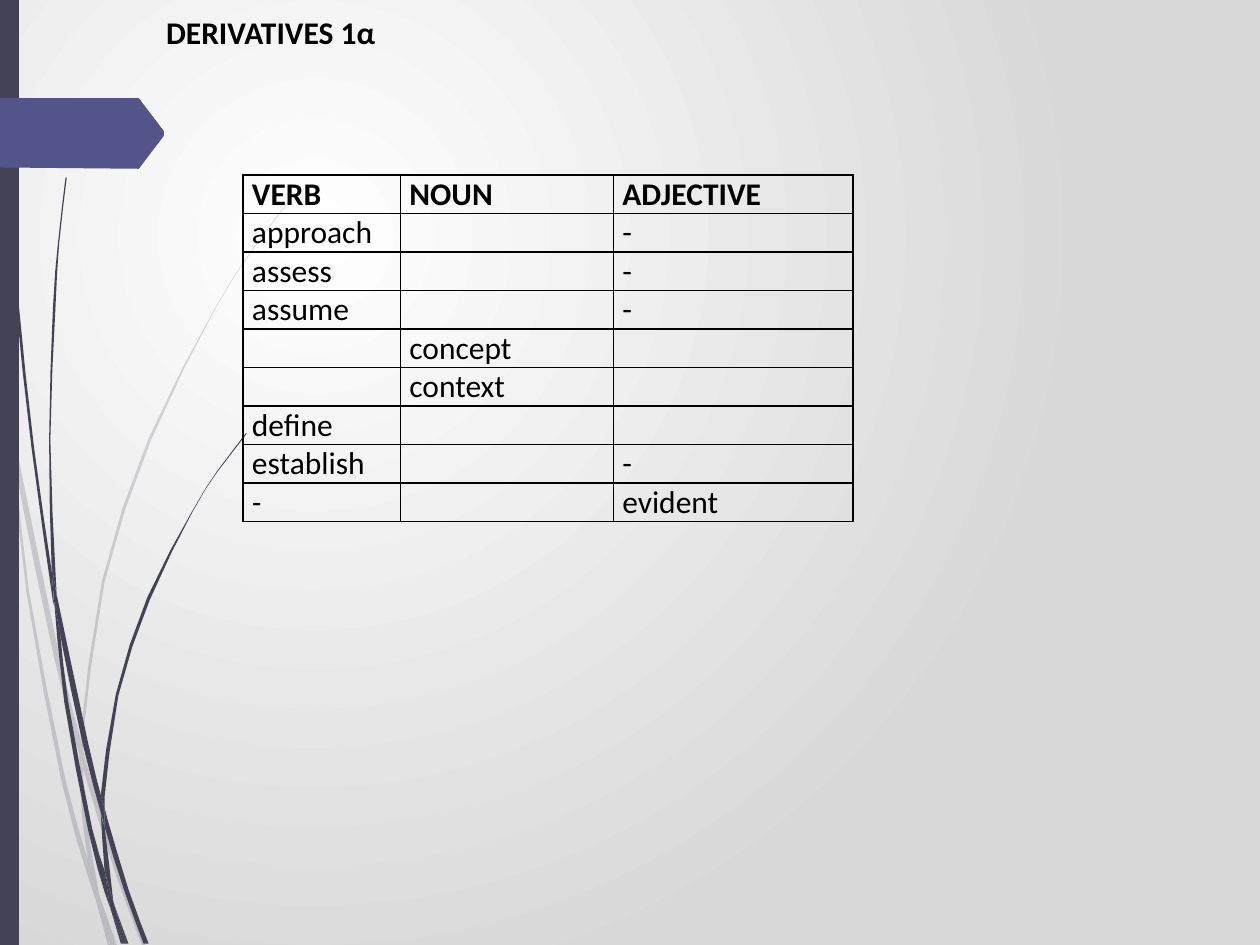
"""Build the DERIVATIVES 1α vocabulary slide."""
from dataclasses import dataclass

import lxml.etree
import pptx
import pptx.dml.color
import pptx.enum.shapes
import pptx.enum.text
import pptx.oxml.ns
import pptx.util

PX = 9144
FONT = "Calibri"
COLORS = {
    "center": "FFFFFF",
    "edge": "D8D8D8",
    "stem": "424456",
    "arrow": "53548A",
    "ink": "000000",
}
ROWS = [
    ("VERB", "NOUN", "ADJECTIVE"),
    ("approach", "", "-"),
    ("assess", "", "-"),
    ("assume", "", "-"),
    ("", "concept", ""),
    ("", "context", ""),
    ("define", "", ""),
    ("establish", "", "-"),
    ("-", "", "evident"),
]
COLUMN_WIDTHS = (125, 169, 190)
ROW_HEIGHT = 30
Points = list[tuple[float, float]]


@dataclass
class Blade:
    """A grass blade outlined by two smooth edges."""
    outward: Points
    back: Points


FADED_BLADES = [
    Blade([(8, 350), (6, 322), (0, 282)], [(0, 299), (8, 344)]),
    Blade([(11, 345), (13, 376), (43, 522), (63, 599)],
          [(64, 586), (47, 520), (11, 345)]),
    Blade([(66, 596), (66, 610), (92, 694), (113, 751)],
          [(116, 751), (95, 692), (69, 607), (66, 596)]),
    Blade([(79, 711), (89, 751)], [(93, 751), (79, 711)]),
    Blade([(8, 350), (21, 470), (49, 621), (69, 693), (76, 714)],
          [(74, 707), (70, 683), (52, 619), (23, 469), (13, 376), (8, 350)]),
    Blade([(63, 599), (65, 646), (70, 683), (72, 692), (79, 711)],
          [(78, 706), (68, 646), (66, 610), (63, 599)]),
    Blade([(234, 153), (201, 197), (171, 244), (118, 348), (81, 461), (64, 584), (66, 596)],
          [(66, 584), (83, 462), (120, 349), (171, 245), (201, 198), (234, 154)]),
    Blade([(76, 714), (86, 751)], [(89, 751), (76, 714)]),
    Blade([(66, 596), (64, 586), (63, 599)], [(66, 608), (66, 596)]),
    Blade([(70, 683), (74, 707), (76, 714), (89, 751)],
          [(79, 711), (72, 692), (70, 683)]),
]
DARK_BLADES = [
    Blade([(2, 0), (5, 110), (12, 233), (25, 355), (42, 477), (43, 481)],
          [(41, 453), (27, 355), (14, 232), (6, 109), (3, 0)]),
    Blade([(45, 472), (48, 505), (66, 592), (80, 645)],
          [(80, 631), (70, 590), (45, 472)]),
    Blade([(83, 641), (83, 656), (99, 708), (114, 749)],
          [(118, 749), (102, 706), (85, 649), (83, 641)]),
    Blade([(43, 477), (51, 557), (70, 659), (83, 708), (88, 722)],
          [(87, 717), (83, 691), (73, 657), (54, 556), (48, 505), (43, 477)]),
    Blade([(52, 141), (46, 193), (42, 245), (39, 349), (41, 449), (45, 472)],
          [(44, 453), (40, 349), (44, 245), (47, 193), (53, 141)]),
    Blade([(91, 719), (100, 749)], [(102, 749), (91, 719)]),
    Blade([(41, 449), (41, 453), (43, 477), (48, 505)], [(45, 472), (41, 449)]),
    Blade([(195, 344), (173, 373), (153, 405), (117, 474), (92, 551), (80, 631), (83, 641)],
          [(83, 633), (94, 552), (119, 476), (153, 406), (173, 374), (196, 344)]),
    Blade([(88, 722), (96, 749)], [(98, 749), (88, 722)]),
    Blade([(80, 645), (83, 691), (87, 706), (91, 719)],
          [(90, 716), (83, 656), (81, 651), (80, 645)]),
    Blade([(80, 631), (80, 645), (83, 656)], [(83, 641), (80, 631)]),
    Blade([(83, 691), (87, 717), (88, 722), (98, 749)],
          [(100, 749), (91, 719), (87, 706), (83, 691)]),
]
ARROW = [(0, 78), (110, 78), (111, 79), (130, 104), (130, 108), (111, 133), (110, 134), (0, 133)]


def rgb(name: str) -> pptx.dml.color.RGBColor:
    """Return a named palette colour."""
    return pptx.dml.color.RGBColor.from_string(COLORS[name])


def smooth(knots: Points) -> Points:
    """Return the knots with a Catmull-Rom midpoint in each long span."""
    padded = [knots[0], *knots, knots[-1]]
    curve = [knots[0]]
    for a, b, c, d in zip(padded, padded[1:], padded[2:], padded[3:]):
        if len(knots) > 2 and abs(c[1] - b[1]) > 30:
            curve.append(tuple((9 * (q + r) - p - s) / 16 for p, q, r, s in zip(a, b, c, d)))
        curve.append(c)
    return curve


def paint(shape, color: str, opacity: int = 100) -> None:
    """Give a shape a plain fill without line or shadow."""
    shape.shadow.inherit = False
    shape.fill.solid()
    shape.fill.fore_color.rgb = rgb(color)
    shape.line.fill.background()
    if opacity < 100:
        fill_color = shape.element.spPr.find(".//" + pptx.oxml.ns.qn("a:srgbClr"))
        lxml.etree.SubElement(fill_color, pptx.oxml.ns.qn("a:alpha"), val=str(opacity * 1000))


def draw_outline(slide, points: Points, color: str, opacity: int = 100) -> None:
    """Draw a closed freeform through the points."""
    corners = [(round(x * PX), round(y * PX)) for x, y in points]
    builder = slide.shapes.build_freeform(*corners[0])
    builder.add_line_segments(corners[1:], close=True)
    paint(builder.convert_to_shape(), color, opacity)


def draw_background(slide) -> None:
    """Fill the background with a circular gradient."""
    fill = slide.background.fill
    fill.gradient()
    for stop, name in zip(fill.gradient_stops, ("center", "edge")):
        stop.color.rgb = rgb(name)
    gradient = slide.element.find(".//" + pptx.oxml.ns.qn("a:gradFill"))
    gradient.remove(gradient.find(pptx.oxml.ns.qn("a:lin")))
    circle = lxml.etree.SubElement(gradient, pptx.oxml.ns.qn("a:path"), path="circle")
    lxml.etree.SubElement(circle, pptx.oxml.ns.qn("a:fillToRect"),
                          l="50000", t="50000", r="100000", b="100000")


def write(paragraph, text: str, bold: bool) -> None:
    """Set the text and font of a paragraph."""
    paragraph.text = text
    paragraph.alignment = pptx.enum.text.PP_ALIGN.JUSTIFY
    font = paragraph.font
    font.name, font.size, font.bold = FONT, pptx.util.Pt(18), bold
    font.color.rgb = rgb("ink")


def draw_borders(cell) -> None:
    """Draw a thin line on every side of a cell."""
    properties = cell._tc.get_or_add_tcPr()
    for index, side in enumerate(("lnL", "lnR", "lnT", "lnB")):
        line = lxml.etree.Element(pptx.oxml.ns.qn(f"a:{side}"), w=str(pptx.util.Pt(1)))
        fill = lxml.etree.SubElement(line, pptx.oxml.ns.qn("a:solidFill"))
        lxml.etree.SubElement(fill, pptx.oxml.ns.qn("a:srgbClr"), val=COLORS["ink"])
        properties.insert(index, line)


def draw_table(slide) -> None:
    """Draw the table of word forms."""
    frame = slide.shapes.add_table(len(ROWS), len(COLUMN_WIDTHS), 193 * PX, 139 * PX,
                                   sum(COLUMN_WIDTHS) * PX, len(ROWS) * ROW_HEIGHT * PX)
    table = frame.table
    table.first_row = table.horz_banding = False
    for column, width in zip(table.columns, COLUMN_WIDTHS):
        column.width = width * PX
    for row_index, words in enumerate(ROWS):
        for column_index, word in enumerate(words):
            cell = table.cell(row_index, column_index)
            cell.margin_left = cell.margin_right = 7 * PX
            cell.margin_top = cell.margin_bottom = 0
            cell.fill.background()
            draw_borders(cell)
            if word:
                write(cell.text_frame.paragraphs[0], word, row_index == 0)


def draw_title(slide) -> None:
    """Draw the slide heading."""
    frame = slide.shapes.add_textbox(122 * PX, 5 * PX, 646 * PX, 40 * PX).text_frame
    frame.word_wrap = True
    frame.auto_size = pptx.enum.text.MSO_AUTO_SIZE.SHAPE_TO_FIT_TEXT
    frame.vertical_anchor = pptx.enum.text.MSO_ANCHOR.MIDDLE
    write(frame.paragraphs[0], "DERIVATIVES 1α", True)


def main() -> None:
    """Build and save the presentation."""
    presentation = pptx.Presentation()
    presentation.slide_width, presentation.slide_height = 1000 * PX, 750 * PX
    slide = presentation.slides.add_slide(presentation.slide_layouts[6])
    draw_background(slide)
    for blades, opacity in ((FADED_BLADES, 20), (DARK_BLADES, 100)):
        for blade in blades:
            draw_outline(slide, smooth(blade.outward) + smooth(blade.back), "stem", opacity)
    rectangle = pptx.enum.shapes.MSO_SHAPE.RECTANGLE
    paint(slide.shapes.add_shape(rectangle, 0, 0, 15 * PX, 750 * PX), "stem")
    draw_outline(slide, ARROW, "arrow")
    draw_table(slide)
    draw_title(slide)
    presentation.save("out.pptx")


if __name__ == "__main__":
    main()
